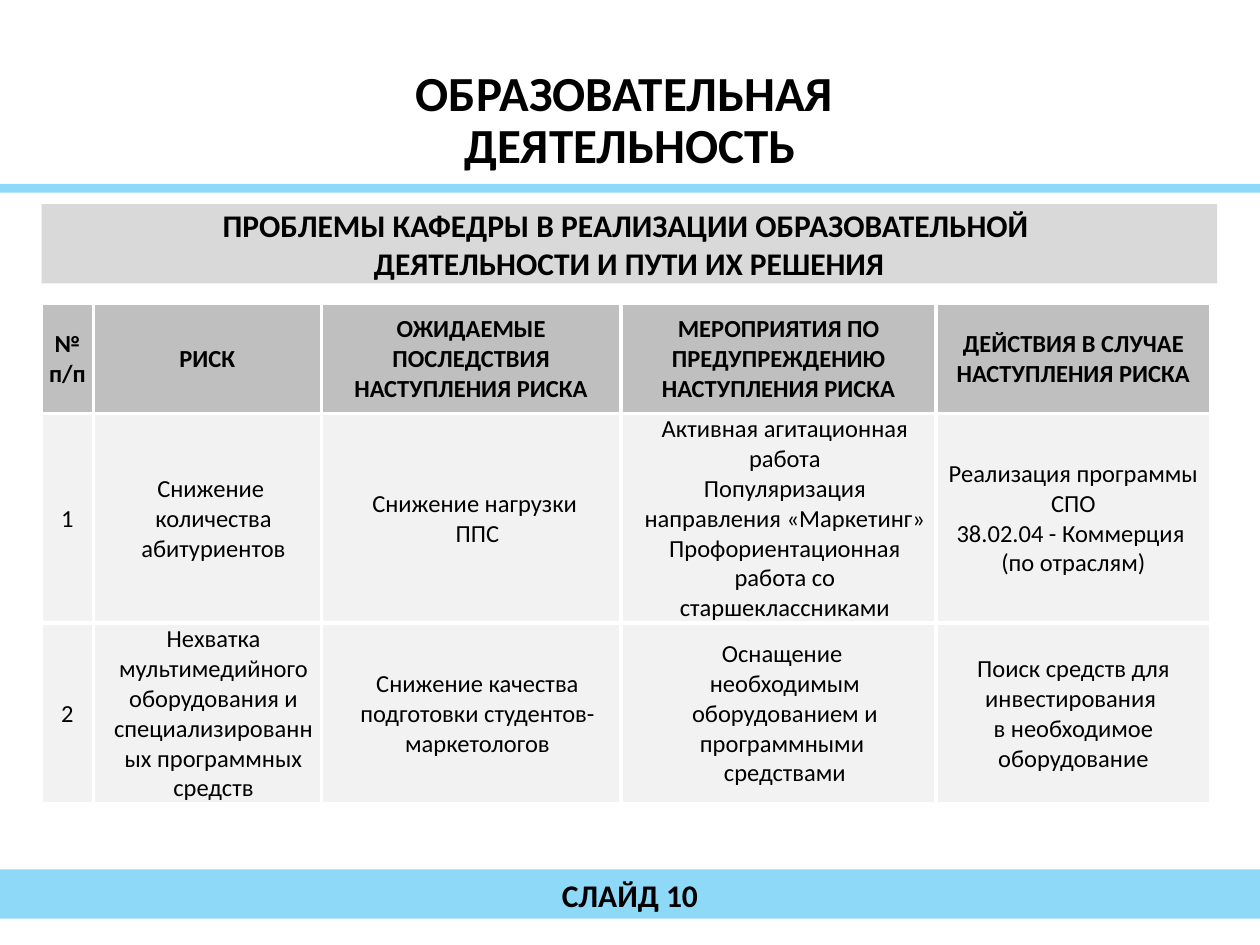
from copy import deepcopy
from dataclasses import dataclass

from lxml.etree import SubElement
from pptx import Presentation
from pptx.dml.color import RGBColor
from pptx.enum.shapes import MSO_SHAPE
from pptx.enum.text import MSO_ANCHOR, MSO_AUTO_SIZE, PP_ALIGN
from pptx.oxml.ns import qn
from pptx.util import Inches, Pt


@dataclass(frozen=True)
class Theme:
    """Colours, font and type sizes of the slide."""
    font: str = "Calibri"
    ink: str = "000000"
    sky: str = "8ED9F8"
    band: str = "D9D9D9"
    head: str = "BFBFBF"
    cell: str = "F2F2F2"
    rule: str = "FFFFFF"
    title: int = 28
    label: int = 18
    body: int = 14


def paint(item, hue):
    """Give a shape or cell a solid fill."""
    item.fill.solid()
    item.fill.fore_color.rgb = RGBColor.from_string(hue)


def write(frame, lines, *, font, size, hue, bold=True, space=None, indent=0):
    """Fill a text frame with centred paragraphs."""
    frame.word_wrap = True
    for i, line in enumerate(lines):
        para = frame.add_paragraph() if i else frame.paragraphs[0]
        para.text = line
        para.alignment = PP_ALIGN.CENTER
        if space:
            para.line_spacing = space
        if indent:
            para._p.get_or_add_pPr().set("marL", str(Inches(indent)))
        for run in para.runs:
            run.font.name = font
            run.font.size = Pt(size)
            run.font.bold = bold
            run.font.color.rgb = RGBColor.from_string(hue)
        for gap in para._p.findall(qn("a:br")):
            gap.append(deepcopy(para.runs[0]._r.rPr))


class Page:
    """Holds the theme and the current slide."""

    def __init__(self, slide, theme):
        """Keep the slide and theme."""
        self.slide = slide
        self.theme = theme

    def text(self, frame, lines, size, **form):
        """Write lines in the theme's font and ink."""
        frame.vertical_anchor = MSO_ANCHOR.MIDDLE
        frame.auto_size = MSO_AUTO_SIZE.NONE
        write(frame, lines, font=self.theme.font, size=size, hue=self.theme.ink, **form)

    def title(self, box, lines):
        """Place and fill the title placeholder."""
        shape = self.slide.shapes.title
        shape.left, shape.top, shape.width, shape.height = map(Inches, box)
        self.text(shape.text_frame, lines, self.theme.title, space=0.9)

    def bar(self, box, hue, lines=()):
        """Draw a plain filled bar, with text if given."""
        shape = self.slide.shapes.add_shape(MSO_SHAPE.RECTANGLE, *map(Inches, box))
        shape.shadow.inherit = False
        shape.line.fill.background()
        paint(shape, hue)
        if lines:
            self.text(shape.text_frame, lines, self.theme.label)

    def label(self, box, lines):
        """Add a text box."""
        shape = self.slide.shapes.add_textbox(*map(Inches, box))
        self.text(shape.text_frame, lines, self.theme.label)

    def edge(self, cell):
        """Draw the cell's four borders."""
        props = cell._tc.get_or_add_tcPr()
        for side in ("a:lnL", "a:lnR", "a:lnT", "a:lnB"):
            line = SubElement(props, qn(side), w=str(Pt(2.25)))
            fill = SubElement(line, qn("a:solidFill"))
            SubElement(fill, qn("a:srgbClr"), val=self.theme.rule)

    def table(self, left, top, cols, rows, data):
        """Add the table, with a bold head row and indented middle columns."""
        box = map(Inches, (left, top, sum(cols), sum(rows)))
        grid = self.slide.shapes.add_table(len(rows), len(cols), *box).table
        for col, width in zip(grid.columns, cols):
            col.width = Inches(width)
        for r, (row, high, texts) in enumerate(zip(grid.rows, rows, data)):
            row.height = Inches(high)
            for c, (cell, lines) in enumerate(zip(row.cells, texts)):
                cell.margin_left = cell.margin_right = cell.margin_top = Inches(0.01)
                cell.margin_bottom = 0
                cell.vertical_anchor = MSO_ANCHOR.MIDDLE
                self.edge(cell)
                paint(cell, self.theme.cell if r else self.theme.head)
                write(cell.text_frame, lines, font=self.theme.font,
                      size=self.theme.body, hue=self.theme.ink, bold=r == 0,
                      indent=0.1 if r and c in (1, 2, 3) else 0)


RISKS = [
    [["№ п/п"], ["РИСК"], ["ОЖИДАЕМЫЕ ПОСЛЕДСТВИЯ НАСТУПЛЕНИЯ РИСКА"],
     ["МЕРОПРИЯТИЯ ПО ПРЕДУПРЕЖДЕНИЮ НАСТУПЛЕНИЯ РИСКА"],
     ["ДЕЙСТВИЯ В СЛУЧАЕ НАСТУПЛЕНИЯ РИСКА"]],
    [["1"], ["Снижение ", "количества абитуриентов"],
     ["Снижение нагрузки ", "ППС"],
     ["Активная агитационная работа",
      "Популяризация направления «Маркетинг»",
      "Профориентационная работа со старшеклассниками"],
     ["Реализация программы СПО", "38.02.04 - Коммерция \n(по отраслям)"]],
    [["2"],
     ["Нехватка мультимедийного оборудования и специализированных программных средств"],
     ["Снижение качества подготовки студентов-маркетологов"],
     ["Оснащение \nнеобходимым оборудованием и программными \nсредствами"],
     ["Поиск средств для инвестирования \nв необходимое оборудование"]],
]


def main():
    """Build the slide and save it."""
    deck = Presentation()
    deck.slide_width, deck.slide_height = Inches(10), Inches(7.5)
    theme = Theme()
    page = Page(deck.slides.add_slide(deck.slide_layouts[5]), theme)
    page.bar((0, 1.46, 10, 0.07), theme.sky)
    page.title((0, 0.54, 10, 0.85), ["ОБРАЗОВАТЕЛЬНАЯ ", "ДЕЯТЕЛЬНОСТЬ"])
    page.bar((0.33, 1.62, 9.33, 0.63), theme.band,
             ["ПРОБЛЕМЫ КАФЕДРЫ В РЕАЛИЗАЦИИ ОБРАЗОВАТЕЛЬНОЙ ",
              "ДЕЯТЕЛЬНОСТИ И ПУТИ ИХ РЕШЕНИЯ"])
    page.bar((0, 6.9, 10, 0.39), theme.sky)
    page.label((0, 6.9, 10, 0.4), ["СЛАЙД 10"])
    page.table(0.33, 2.41, (0.41, 1.81, 2.38, 2.5, 2.18), (0.87, 1.63, 1.42), RISKS)
    deck.save("out.pptx")


if __name__ == "__main__":
    main()
